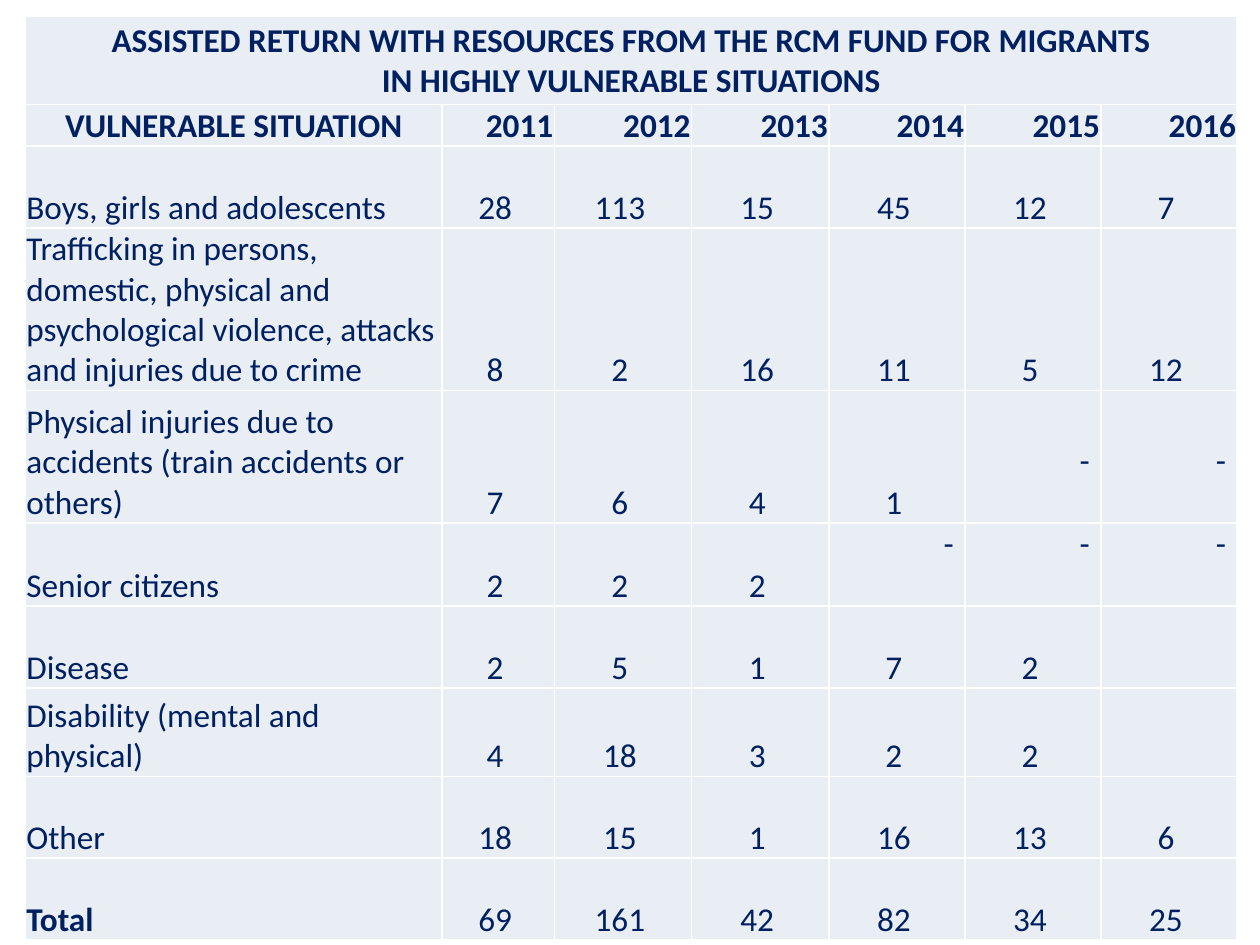
from dataclasses import dataclass

from lxml.etree import SubElement
from pptx import Presentation
from pptx.dml.color import RGBColor
from pptx.enum.text import MSO_ANCHOR, PP_ALIGN
from pptx.oxml.ns import qn
from pptx.table import Table, _Cell
from pptx.util import Inches, Pt


@dataclass(frozen=True)
class Theme:
    """Colours, type and cell spacing of the table."""
    font: str = "Calibri"
    size: float = 19
    ink: str = "002060"
    fill: str = "E9EDF4"
    border: str = "FFFFFF"
    border_width: float = 1
    inset: float = 0.01
    number_inset: float = 0.06
    dash_inset: float = 0.09
    dash_lift: float = 0.33


@dataclass(frozen=True)
class Situation:
    """One row: its label, its height in inches and its yearly values."""
    label: str
    height: float
    values: tuple[str, ...]
    bold_label: bool = False


THEME = Theme()
TITLE = ("ASSISTED RETURN WITH RESOURCES FROM THE RCM FUND FOR MIGRANTS",
         "IN HIGHLY VULNERABLE SITUATIONS")
TITLE_HEIGHT = 0.7
HEADER_HEIGHT = 0.32
HEADERS = ("VULNERABLE SITUATION", "2011", "2012", "2013", "2014", "2015", "2016")
COLUMN_WIDTHS = (3.31, 0.89, 1.09, 1.09, 1.08, 1.08, 1.08)
SITUATIONS = (
    Situation("Boys, girls and adolescents", 0.65, ("28", "113", "15", "45", "12", "7")),
    Situation("Trafficking in persons, domestic, physical and psychological violence, "
              "attacks and injuries due to crime", 1.29, ("8", "2", "16", "11", "5", "12")),
    Situation("Physical injuries due to accidents (train accidents or others)", 1.05,
              ("7", "6", "4", "1", "-", "-")),
    Situation("Senior citizens", 0.65, ("2", "2", "2", "-", "-", "-")),
    Situation("Disease", 0.65, ("2", "5", "1", "7", "2", "")),
    Situation("Disability (mental and physical)", 0.7, ("4", "18", "3", "2", "2", "")),
    Situation("Other", 0.65, ("18", "15", "1", "16", "13", "6")),
    Situation("Total", 0.65, ("69", "161", "42", "82", "34", "25"), bold_label=True),
)


def style_cell(cell: _Cell) -> None:
    """Give a cell its borders, fill and insets."""
    properties = cell._tc.get_or_add_tcPr()
    for side in ("a:lnL", "a:lnR", "a:lnT", "a:lnB"):
        line = SubElement(properties, qn(side), w=str(Pt(THEME.border_width)))
        SubElement(SubElement(line, qn("a:solidFill")), qn("a:srgbClr"), val=THEME.border)
    cell.fill.solid()
    cell.fill.fore_color.rgb = RGBColor.from_string(THEME.fill)
    cell.margin_left = cell.margin_right = cell.margin_top = Inches(THEME.inset)
    cell.margin_bottom = 0
    cell.vertical_anchor = MSO_ANCHOR.BOTTOM


def write_text(cell: _Cell, *lines: str, bold: bool = False,
               align: PP_ALIGN = PP_ALIGN.LEFT) -> None:
    """Write each line as a formatted paragraph of the cell."""
    frame = cell.text_frame
    for index, line in enumerate(lines):
        paragraph = frame.add_paragraph() if index else frame.paragraphs[0]
        paragraph.alignment = align
        span = paragraph.add_run()
        span.text = line
        span.font.name = THEME.font
        span.font.size = Pt(THEME.size)
        span.font.bold = bold
        span.font.color.rgb = RGBColor.from_string(THEME.ink)


def write_value(cell: _Cell, value: str) -> None:
    """Centre a number, or set a dash one line up at the right."""
    if value == "-":
        cell.margin_right = Inches(THEME.dash_inset)
        cell.margin_bottom = Inches(THEME.dash_lift)
        write_text(cell, value, align=PP_ALIGN.RIGHT)
    elif value:
        cell.margin_right = Inches(THEME.number_inset)
        write_text(cell, value, align=PP_ALIGN.CENTER)


def fill_table(table: Table) -> None:
    """Write the title, the headers and every situation."""
    title = table.cell(0, 0)
    title.merge(table.cell(0, len(HEADERS) - 1))
    title.vertical_anchor = MSO_ANCHOR.MIDDLE
    write_text(title, *TITLE, bold=True, align=PP_ALIGN.CENTER)
    for column, header in enumerate(HEADERS):
        align = PP_ALIGN.RIGHT if column else PP_ALIGN.CENTER
        write_text(table.cell(1, column), header, bold=True, align=align)
    for row, situation in enumerate(SITUATIONS, start=2):
        write_text(table.cell(row, 0), situation.label, bold=situation.bold_label)
        for column, value in enumerate(situation.values, start=1):
            write_value(table.cell(row, column), value)


def main() -> None:
    """Build the slide and save it."""
    deck = Presentation()
    deck.slide_width, deck.slide_height = Inches(10), Inches(7.5)
    page = deck.slides.add_slide(deck.slide_layouts[6])
    heights = (TITLE_HEIGHT, HEADER_HEIGHT, *(item.height for item in SITUATIONS))
    table = page.shapes.add_table(
        len(heights), len(COLUMN_WIDTHS), Inches(0.2), Inches(0.13),
        Inches(sum(COLUMN_WIDTHS)), Inches(sum(heights))).table
    table.first_row = table.horz_banding = False
    for column, width in zip(table.columns, COLUMN_WIDTHS):
        column.width = Inches(width)
    for row, height in zip(table.rows, heights):
        row.height = Inches(height)
    for cell in table.iter_cells():
        style_cell(cell)
    fill_table(table)
    deck.save("out.pptx")


if __name__ == "__main__":
    main()
